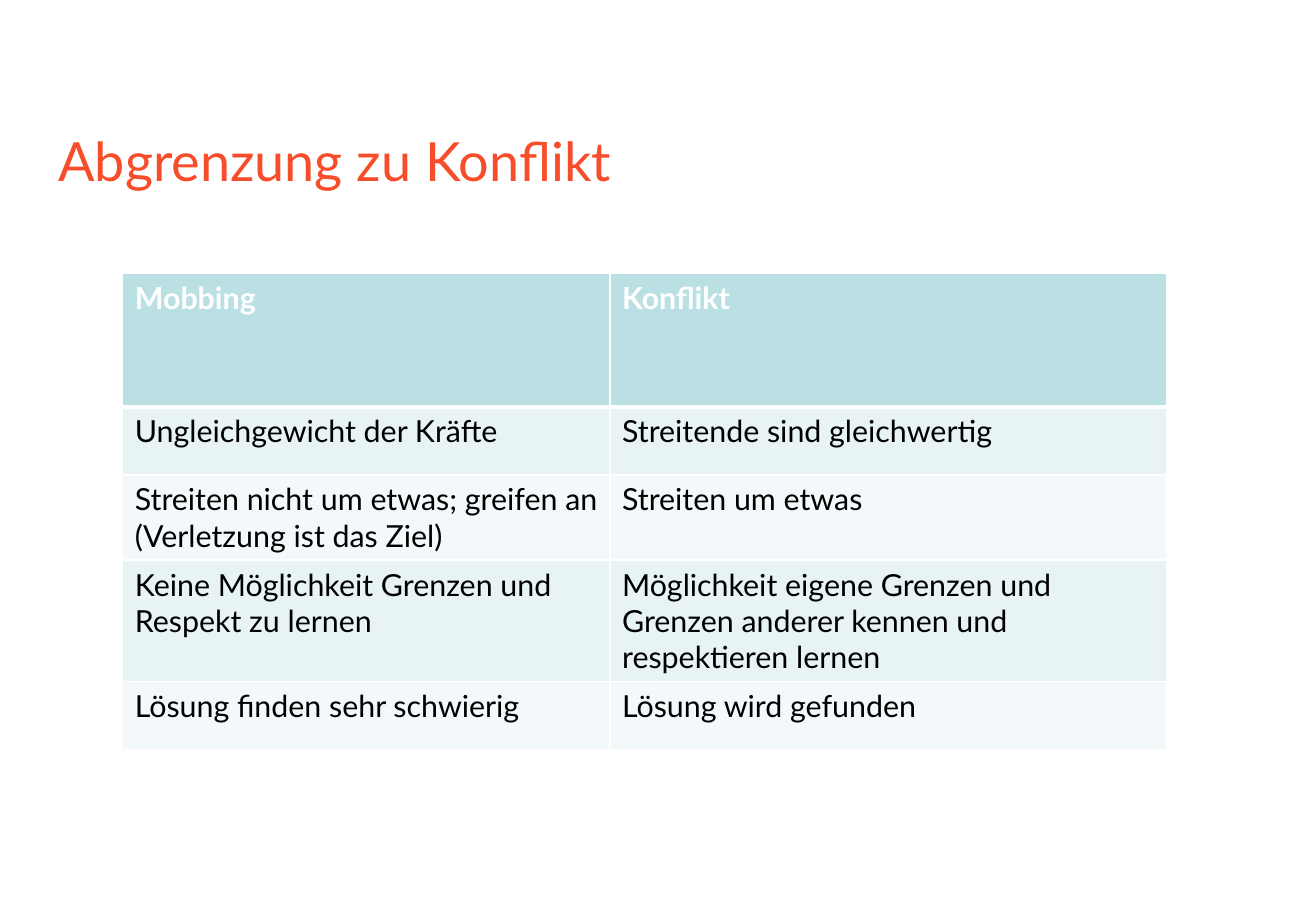
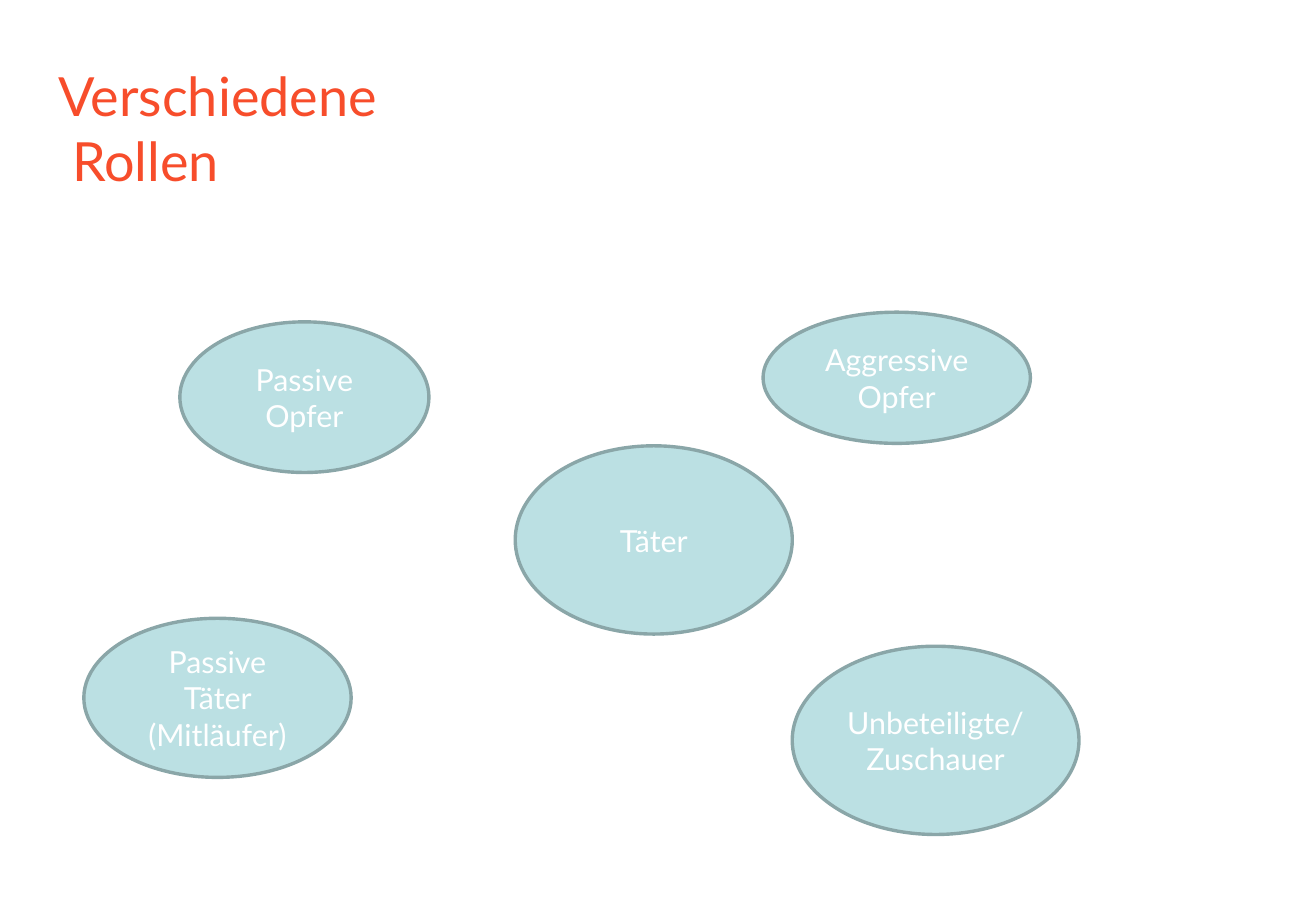
from dataclasses import dataclass

from lxml.etree import SubElement
from pptx import Presentation
from pptx.dml.color import RGBColor
from pptx.enum.shapes import MSO_SHAPE
from pptx.enum.text import MSO_ANCHOR, MSO_AUTO_SIZE, PP_ALIGN
from pptx.oxml.ns import qn
from pptx.slide import Slide
from pptx.table import _Cell as Cell
from pptx.text.text import _Paragraph as Paragraph
from pptx.util import Inches, Pt

COLORS = {
    "title": "F74D2B",
    "accent": "BBE0E3",
    "outline": "8AA6A8",
    "band_dark": "E7F3F4",
    "band_light": "F3F9FA",
    "white": "FFFFFF",
    "black": "000000",
}
FONT = "Lato"
TITLE_ONLY_LAYOUT = 5

COLUMN_WIDTHS = (4.01, 4.58)
ROW_HEIGHTS = (1.1, 0.56, 0.56, 0.98, 0.56)
COMPARISON = (
    ("Mobbing", "Konflikt"),
    ("Ungleichgewicht der Kräfte", "Streitende sind gleichwertig"),
    ("Streiten nicht um etwas; greifen an (Verletzung ist das Ziel)", "Streiten um etwas"),
    (
        "Keine Möglichkeit Grenzen und Respekt zu lernen",
        "Möglichkeit eigene Grenzen und Grenzen anderer kennen und respektieren lernen",
    ),
    ("Lösung finden sehr schwierig", "Lösung wird gefunden"),
)


@dataclass(frozen=True)
class Role:
    text: str
    left: float
    top: float
    width: float
    height: float


ROLES = (
    Role("Passive Opfer", 1.48, 2.65, 2.05, 1.24),
    Role("Aggressive Opfer", 6.28, 2.57, 2.2, 1.08),
    Role("Unbeteiligte/Zuschauer", 6.52, 5.32, 2.36, 1.55),
    Role("Täter", 4.24, 3.67, 2.28, 1.55),
    Role("Passive Täter (Mitläufer)", 0.69, 5.09, 2.2, 1.31),
)


def rgb(name: str) -> RGBColor:
    return RGBColor.from_string(COLORS[name])


def format_paragraph(
    paragraph: Paragraph,
    color: str,
    size: int = 18,
    bold: bool = False,
    alignment: PP_ALIGN = PP_ALIGN.LEFT,
) -> None:
    paragraph.alignment = alignment
    font_values = {"name": FONT, "size": Pt(size), "bold": bold}
    for run in paragraph.runs:
        for attribute, value in font_values.items():
            setattr(run.font, attribute, value)
        run.font.color.rgb = rgb(color)


def add_titled_slide(presentation, title_text: str) -> Slide:
    slide = presentation.slides.add_slide(presentation.slide_layouts[TITLE_ONLY_LAYOUT])
    title = slide.shapes.title
    position = {"left": 0.38, "top": 0.84, "width": 10.23, "height": 0.79}
    for attribute, value in position.items():
        setattr(title, attribute, Inches(value))
    frame = title.text_frame
    frame.text = title_text
    frame.auto_size = MSO_AUTO_SIZE.NONE
    frame.vertical_anchor = MSO_ANCHOR.BOTTOM
    format_paragraph(frame.paragraphs[0], "title", size=32)
    return slide


def set_borders(cell: Cell, top: int, bottom: int) -> None:
    """Draw white borders; top and bottom widths are in points."""
    properties = cell._tc.get_or_add_tcPr()
    for side, width in {"L": 1, "R": 1, "T": top, "B": bottom}.items():
        line = SubElement(properties, qn(f"a:ln{side}"), w=str(Pt(width)))
        fill = SubElement(line, qn("a:solidFill"))
        SubElement(fill, qn("a:srgbClr"), val=COLORS["white"])


def add_comparison_table(slide: Slide) -> None:
    table = slide.shapes.add_table(
        len(ROW_HEIGHTS), len(COLUMN_WIDTHS), Inches(1.01), Inches(2.25),
        Inches(sum(COLUMN_WIDTHS)), Inches(sum(ROW_HEIGHTS)),
    ).table
    table.horz_banding = False
    for column, width in zip(table.columns, COLUMN_WIDTHS):
        column.width = Inches(width)
    for index, (row, height, texts) in enumerate(zip(table.rows, ROW_HEIGHTS, COMPARISON)):
        row.height = Inches(height)
        is_header = index == 0
        band = "band_dark" if index % 2 else "band_light"
        for cell, text in zip(row.cells, texts):
            set_borders(cell, top=3 if index == 1 else 1, bottom=3 if is_header else 1)
            cell.fill.solid()
            cell.fill.fore_color.rgb = rgb("accent" if is_header else band)
            cell.text = text
            format_paragraph(
                cell.text_frame.paragraphs[0], "white" if is_header else "black", bold=is_header
            )


def add_role(slide: Slide, role: Role) -> None:
    bounds = (Inches(value) for value in (role.left, role.top, role.width, role.height))
    shape = slide.shapes.add_shape(MSO_SHAPE.OVAL, *bounds)
    shape.shadow.inherit = False
    shape.fill.solid()
    shape.fill.fore_color.rgb = rgb("accent")
    shape.line.color.rgb = rgb("outline")
    shape.line.width = Pt(2)
    frame = shape.text_frame
    frame.text = role.text
    frame.word_wrap = True
    frame.vertical_anchor = MSO_ANCHOR.MIDDLE
    format_paragraph(frame.paragraphs[0], "white", alignment=PP_ALIGN.CENTER)


def main() -> None:
    presentation = Presentation()
    presentation.slide_width = Inches(10.83)
    presentation.slide_height = Inches(7.5)

    add_comparison_table(add_titled_slide(presentation, "Abgrenzung zu Konflikt"))

    roles_slide = add_titled_slide(presentation, "Verschiedene\v Rollen")
    for role in ROLES:
        add_role(roles_slide, role)

    presentation.save("out.pptx")


if __name__ == "__main__":
    main()
